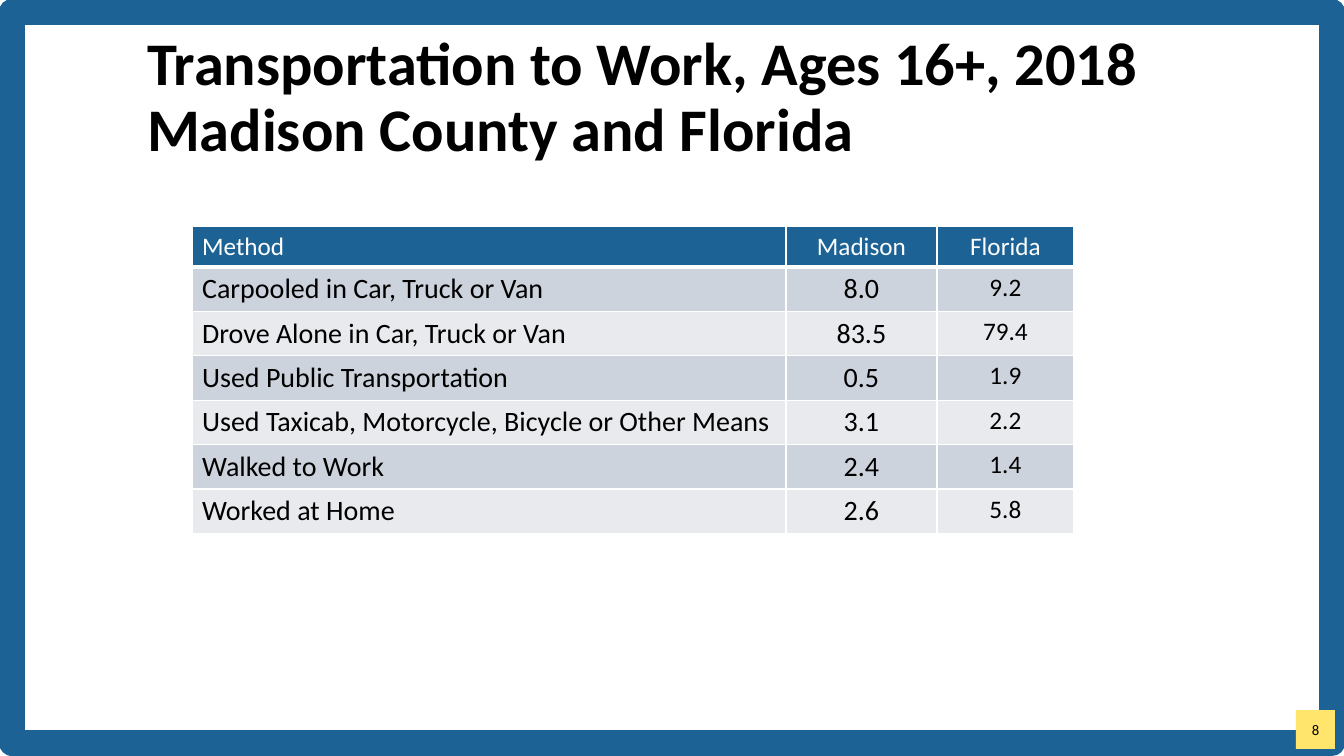
from lxml import etree
from pptx import Presentation, util as u
from pptx.dml.color import RGBColor
from pptx.enum import shapes, text
from pptx.oxml import ns

PX = 914400 / 100.8
FONT = "Calibri"
COLORS = {"blue": "1C6294", "yellow": "FFE56B", "black": "000000",
          "white": "FFFFFF", "dark_band": "CDD3DC", "light_band": "E8EAEE"}
TITLE = ["Transportation to Work, Ages 16+, 2018", "Madison County and Florida"]
ROWS = [
    ("Method", "Madison", "Florida"),
    ("Carpooled in Car, Truck or Van", "8.0", "9.2"),
    ("Drove Alone in Car, Truck or Van", "83.5", "79.4"),
    ("Used Public Transportation", "0.5", "1.9"),
    ("Used Taxicab, Motorcycle, Bicycle or Other Means", "3.1", "2.2"),
    ("Walked to Work", "2.4", "1.4"),
    ("Worked at Home", "2.6", "5.8"),
]
COL_WIDTHS = [594, 151, 137]
ROW_HEIGHT = 41


def px(n):
    return u.Emu(round(n * PX))


def rgb(name):
    return RGBColor.from_string(COLORS[name])


def add_run(p, words, size, color="black", bold=False):
    r = p.add_run()
    r.text = words
    r.font.name, r.font.size, r.font.bold = FONT, u.Pt(size), bold
    r.font.color.rgb = rgb(color)


def add_rect(s, box):
    sp = s.shapes.add_shape(shapes.MSO_SHAPE.RECTANGLE, *map(px, box))
    sp.shadow.inherit = False
    return sp


def add_frame(s, box):
    sp = add_rect(s, box)
    sp.fill.background()
    sp.line.color.rgb = rgb("blue")
    sp.line.width = u.Pt(19)


def add_page_number(s, box, number):
    sp = add_rect(s, box)
    sp.fill.solid()
    sp.fill.fore_color.rgb = rgb("yellow")
    sp.line.fill.background()
    tf = sp.text_frame
    tf.margin_left = tf.margin_right = tf.margin_top = tf.margin_bottom = 0
    tf.vertical_anchor = text.MSO_ANCHOR.MIDDLE
    p = tf.paragraphs[0]
    p.alignment = text.PP_ALIGN.CENTER
    add_run(p, number, 10.5)


def add_title(s, box, lines):
    sp = s.shapes.title
    sp.left, sp.top, sp.width, sp.height = map(px, box)
    tf = sp.text_frame
    tf.word_wrap = True
    tf.auto_size = text.MSO_AUTO_SIZE.NONE
    tf.vertical_anchor = text.MSO_ANCHOR.MIDDLE
    p = tf.paragraphs[0]
    p.alignment = text.PP_ALIGN.LEFT
    p.line_spacing = 0.9
    for i, line in enumerate(lines):
        if i:
            p.add_line_break()
        add_run(p, line, 43.2, bold=True)


def set_borders(cell, bottom):
    tcPr = cell._tc.get_or_add_tcPr()
    for side, width in (("L", 1), ("R", 1), ("T", 1), ("B", bottom)):
        ln = etree.SubElement(tcPr, ns.qn(f"a:ln{side}"), w=str(u.Pt(width)))
        fill = etree.SubElement(ln, ns.qn("a:solidFill"))
        etree.SubElement(fill, ns.qn("a:srgbClr"), val=COLORS["white"])


def add_commute_table(s, left, top):
    table = s.shapes.add_table(len(ROWS), len(COL_WIDTHS), px(left), px(top),
                               px(sum(COL_WIDTHS)), px(ROW_HEIGHT * len(ROWS))).table
    for col, width in zip(table.columns, COL_WIDTHS):
        col.width = px(width)
    for i, row in enumerate(ROWS):
        table.rows[i].height = px(ROW_HEIGHT)
        header = i == 0
        band = "blue" if header else "dark_band" if i % 2 else "light_band"
        for j, words in enumerate(row):
            cell = table.cell(i, j)
            set_borders(cell, 3 if header else 1)
            cell.fill.solid()
            cell.fill.fore_color.rgb = rgb(band)
            p = cell.text_frame.paragraphs[0]
            p.alignment = text.PP_ALIGN.CENTER if j else text.PP_ALIGN.LEFT
            # Header and Florida column are set slightly smaller
            add_run(p, words, 18 if header or j == 2 else 20,
                    "white" if header else "black")


def main():
    prs = Presentation()
    prs.slide_width, prs.slide_height = px(1344), px(756)
    s = prs.slides.add_slide(prs.slide_layouts[5])
    # Slide border and page number
    add_frame(s, (12, 12, 1320, 731))
    add_page_number(s, (1296, 710, 39, 39), "8")
    # Heading and data
    add_title(s, (137, 46, 1134, 106), TITLE)
    add_commute_table(s, 192, 226)
    prs.save("out.pptx")


if __name__ == "__main__":
    main()
